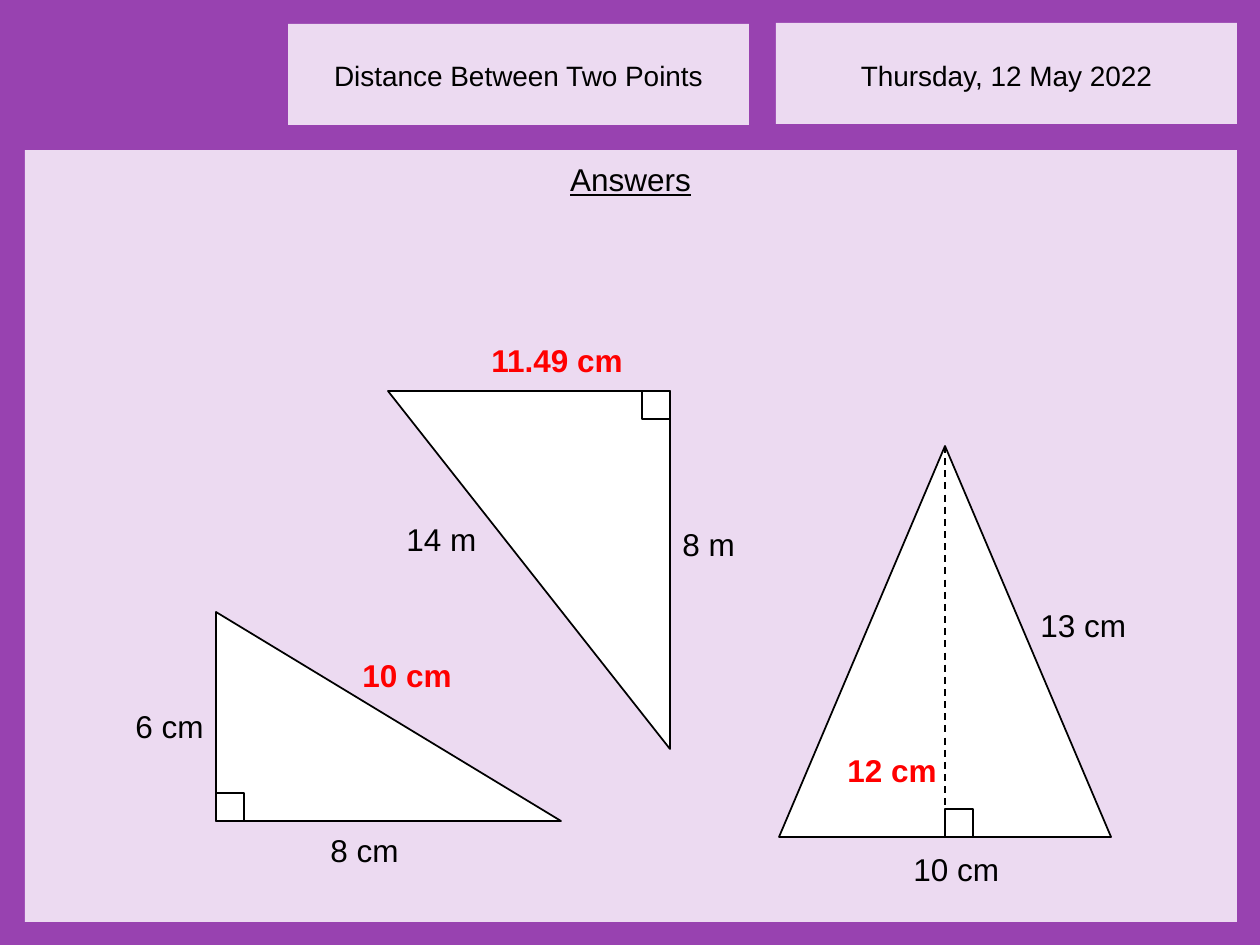
from pptx import Presentation
from pptx.dml.color import RGBColor
from pptx.enum.dml import MSO_LINE
from pptx.enum.shapes import MSO_CONNECTOR, MSO_SHAPE
from pptx.enum.text import MSO_AUTO_SIZE, PP_ALIGN
from pptx.oxml.ns import qn
from pptx.util import Emu, Pt

RECTANGLE = MSO_SHAPE.RECTANGLE
RIGHT_TRIANGLE = MSO_SHAPE.RIGHT_TRIANGLE
TRIANGLE = MSO_SHAPE.ISOSCELES_TRIANGLE
STRAIGHT = MSO_CONNECTOR.STRAIGHT
DASH = MSO_LINE.DASH
LEFT, CENTER = PP_ALIGN.LEFT, PP_ALIGN.CENTER
FIT_SHAPE = MSO_AUTO_SIZE.SHAPE_TO_FIT_TEXT

EMU_PER_PX = 914400 / 126
PURPLE, LILAC = "9842B0", "ECDAF1"
BLACK, WHITE, RED = "000000", "FFFFFF", "FF0000"
CORNER = 28

HEADERS = [
    ("Thursday, 12 May 2022", 776, 23),
    ("Distance Between Two Points", 288, 24),
]
GIVEN_LENGTHS = [
    ("6 cm", 123, 701, 152),
    ("8 cm", 318, 825, 152),
    ("14 m", 394, 514, 152),
    ("8 m", 670, 519, 152),
    ("13 cm", 1028, 600, 128),
    ("10 cm", 901, 844, 152),
]
ANSWERS = [
    ("10 cm", 350, 650, 128),
    ("11.49 cm", 479, 335, 173),
    ("12 cm", 835, 745, 173),
]


def px(*lengths):
    return [Emu(round(length * EMU_PER_PX)) for length in lengths]


def color(value):
    return RGBColor.from_string(value)


def add_filled(slide, kind, left, top, width, height, fill, outlined=False):
    shape = slide.shapes.add_shape(kind, *px(left, top, width, height))
    shape.shadow.inherit = False
    shape.fill.solid()
    shape.fill.fore_color.rgb = color(fill)
    if outlined:
        shape.line.color.rgb = color(BLACK)
        shape.line.width = Pt(1)
    else:
        shape.line.fill.background()
    return shape


def add_figure(slide, kind, left, top, width, height):
    """Add a white shape with a black outline."""
    return add_filled(slide, kind, left, top, width, height, WHITE, outlined=True)


def add_label(slide, text, left, top, width, height=50, size=18,
              ink=BLACK, bold=False, underline=False, align=LEFT):
    box = slide.shapes.add_textbox(*px(left, top, width, height))
    box.text_frame.word_wrap = True
    box.text_frame.auto_size = FIT_SHAPE
    para = box.text_frame.paragraphs[0]
    para.text = text
    para.alignment = align
    para.font.name = "Arial"
    para.font.size = Pt(size)
    para.font.bold = bold
    para.font.underline = underline
    para.font.color.rgb = color(ink)


def add_height_line(slide, x, top, bottom):
    line = slide.shapes.add_connector(STRAIGHT, *px(x, top, x, bottom))
    line.line.color.rgb = color(BLACK)
    line.line.width = Pt(1)
    line.line.dash_style = DASH
    properties = line._element.spPr
    properties.append(properties.makeelement(qn("a:effectLst"), {}))


def add_frame(slide):
    add_filled(slide, RECTANGLE, 0, 0, 1260, 945, PURPLE)
    for text, left, top in HEADERS:
        add_filled(slide, RECTANGLE, left, top, 461, 101, LILAC)
        add_label(slide, text, left, 52, 461, 47, size=16, align=CENTER)
    add_filled(slide, RECTANGLE, 25, 150, 1212, 772, LILAC)
    add_label(slide, "Answers", 32, 154, 1197, underline=True, align=CENTER)


def add_triangles(slide):
    add_figure(slide, RIGHT_TRIANGLE, 216, 612, 345, 209)
    add_figure(slide, RIGHT_TRIANGLE, 388, 391, 282, 358).rotation = 180
    add_figure(slide, TRIANGLE, 779, 446, 332, 391)
    add_height_line(slide, 945, 446, 837)
    for left, top in [(670 - CORNER, 391), (945, 837 - CORNER), (216, 821 - CORNER)]:
        add_figure(slide, RECTANGLE, left, top, CORNER, CORNER)


def main():
    deck = Presentation()
    deck.slide_width, deck.slide_height = px(1260, 945)
    slide = deck.slides.add_slide(deck.slide_layouts[6])
    add_frame(slide)
    add_triangles(slide)
    for text, left, top, width in GIVEN_LENGTHS:
        add_label(slide, text, left, top, width)
    for text, left, top, width in ANSWERS:
        add_label(slide, text, left, top, width, ink=RED, bold=True)
    deck.save("out.pptx")


if __name__ == "__main__":
    main()
